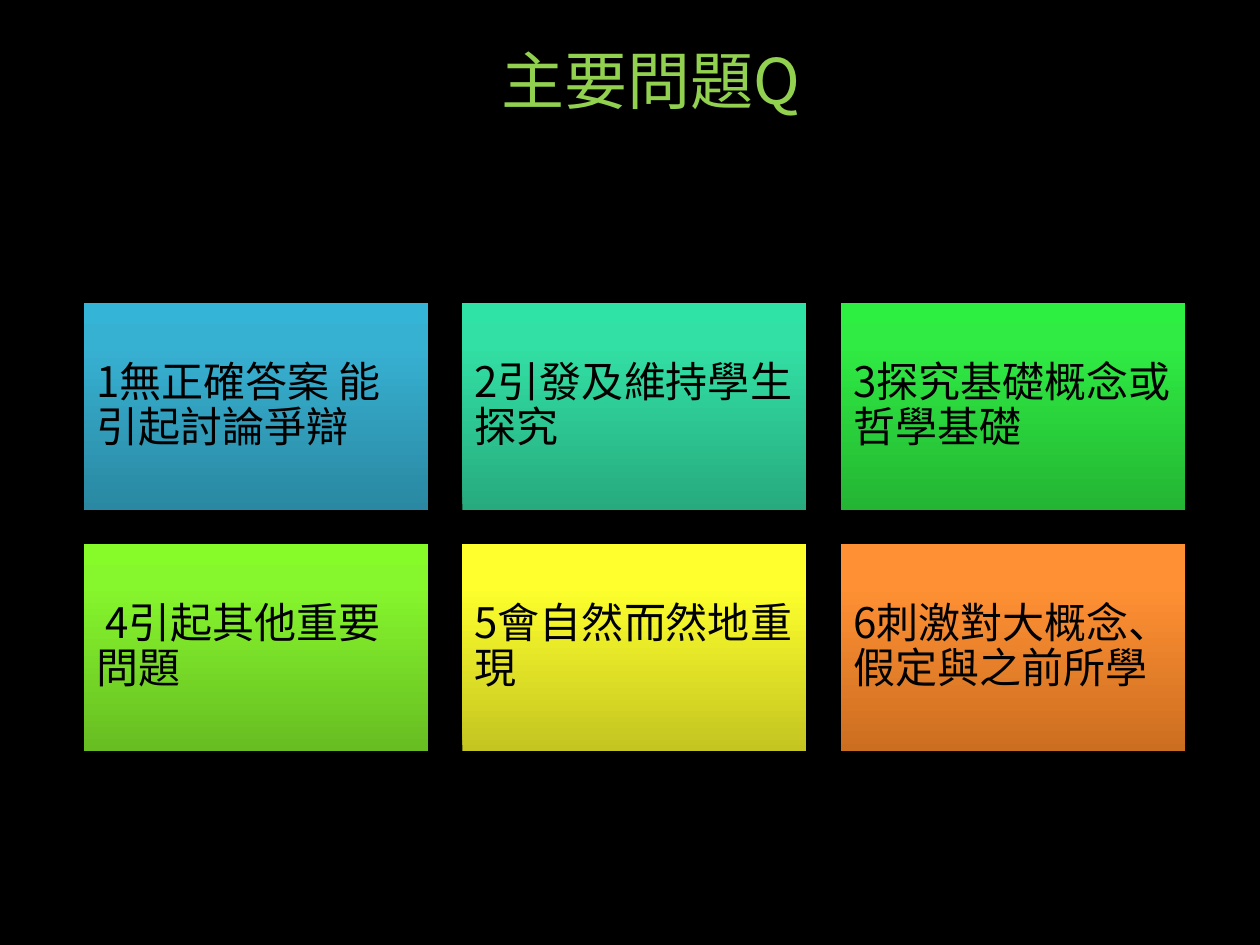
from copy import deepcopy
from dataclasses import dataclass

from lxml import etree
from pptx import Presentation
from pptx.dml.color import RGBColor
from pptx.enum import shapes, text
from pptx.oxml import ns
from pptx.util import Cm, Pt

FONT = "Noto Sans CJK SC"
BLACK = RGBColor(0x00, 0x00, 0x00)
LIME = RGBColor(0x92, 0xD0, 0x50)
LEFT, TOP = 1.69, 6.11
WIDE, HIGH = 6.94, 4.17
STEP_X, STEP_Y = 7.63, 4.86
COLS = 3
STOPS = (0, 0.8, 1)


@dataclass(frozen=True)
class Card:
    label: str
    low: RGBColor
    mid: RGBColor
    top: RGBColor


CARDS = [
    Card("1無正確答案 能引起討論爭辯", RGBColor(0x2A, 0x88, 0xA2),
         RGBColor(0x37, 0xB1, 0xD2), RGBColor(0x34, 0xB4, 0xD6)),
    Card("2引發及維持學生探究", RGBColor(0x27, 0xAB, 0x7E),
         RGBColor(0x32, 0xDF, 0xA4), RGBColor(0x2F, 0xE3, 0xA6)),
    Card("3探究基礎概念或哲學基礎", RGBColor(0x24, 0xB5, 0x34),
         RGBColor(0x2F, 0xEB, 0x43), RGBColor(0x2C, 0xEF, 0x41)),
    Card(" 4引起其他重要問題", RGBColor(0x67, 0xBD, 0x22),
         RGBColor(0x86, 0xF6, 0x2D), RGBColor(0x86, 0xFB, 0x29)),
    Card("5會自然而然地重現", RGBColor(0xC4, 0xC5, 0x21),
         RGBColor(0xFE, 0xFF, 0x2C), RGBColor(0xFE, 0xFF, 0x2D)),
    Card("6刺激對大概念、假定與之前所學", RGBColor(0xCC, 0x6E, 0x20),
         RGBColor(0xFF, 0x90, 0x34), RGBColor(0xFF, 0x91, 0x36)),
]


def write(shape, words: str, size: int, color: RGBColor, align):
    frame = shape.text_frame
    frame.text = words
    frame.word_wrap = True
    frame.vertical_anchor = text.MSO_ANCHOR.MIDDLE
    para = frame.paragraphs[0]
    para.alignment = align
    for run in para.runs:
        run.font.name = FONT
        run.font.size = Pt(size)
        run.font.color.rgb = color
        east = etree.SubElement(run.font._element, ns.qn("a:ea"))
        east.set("typeface", FONT)
    return frame


def shade(shape, card: Card) -> None:
    fill = shape.fill
    fill.gradient()
    fill.gradient_angle = 90
    stops = shape._element.spPr.find(".//" + ns.qn("a:gsLst"))
    stops.append(deepcopy(stops[-1]))
    colors = (card.low, card.mid, card.top)
    for stop, place, color in zip(fill.gradient_stops, STOPS, colors):
        stop.position = place
        stop.color.rgb = color


def draw(slide, card: Card, row: int, col: int) -> None:
    box = slide.shapes.add_shape(
        shapes.MSO_SHAPE.RECTANGLE,
        Cm(LEFT + col * STEP_X), Cm(TOP + row * STEP_Y), Cm(WIDE), Cm(HIGH))
    box.shadow.inherit = False
    box.line.fill.background()
    shade(box, card)
    frame = write(box, card.label, 24, BLACK, text.PP_ALIGN.LEFT)
    frame.margin_left = frame.margin_right = Cm(0.25)
    frame.margin_top = frame.margin_bottom = Cm(0.25)
    frame.paragraphs[0].line_spacing = 0.9


def main() -> None:
    deck = Presentation()
    deck.slide_width, deck.slide_height = Cm(25.4), Cm(19.05)
    slide = deck.slides.add_slide(deck.slide_layouts[6])
    back = slide.background.fill
    back.solid()
    back.fore_color.rgb = BLACK
    title = slide.shapes.add_textbox(Cm(LEFT), Cm(0), Cm(22.86), Cm(3.18))
    write(title, "主要問題Q", 36, LIME, text.PP_ALIGN.CENTER)
    for index, card in enumerate(CARDS):
        draw(slide, card, *divmod(index, COLS))
    deck.save("out.pptx")


if __name__ == "__main__":
    main()
